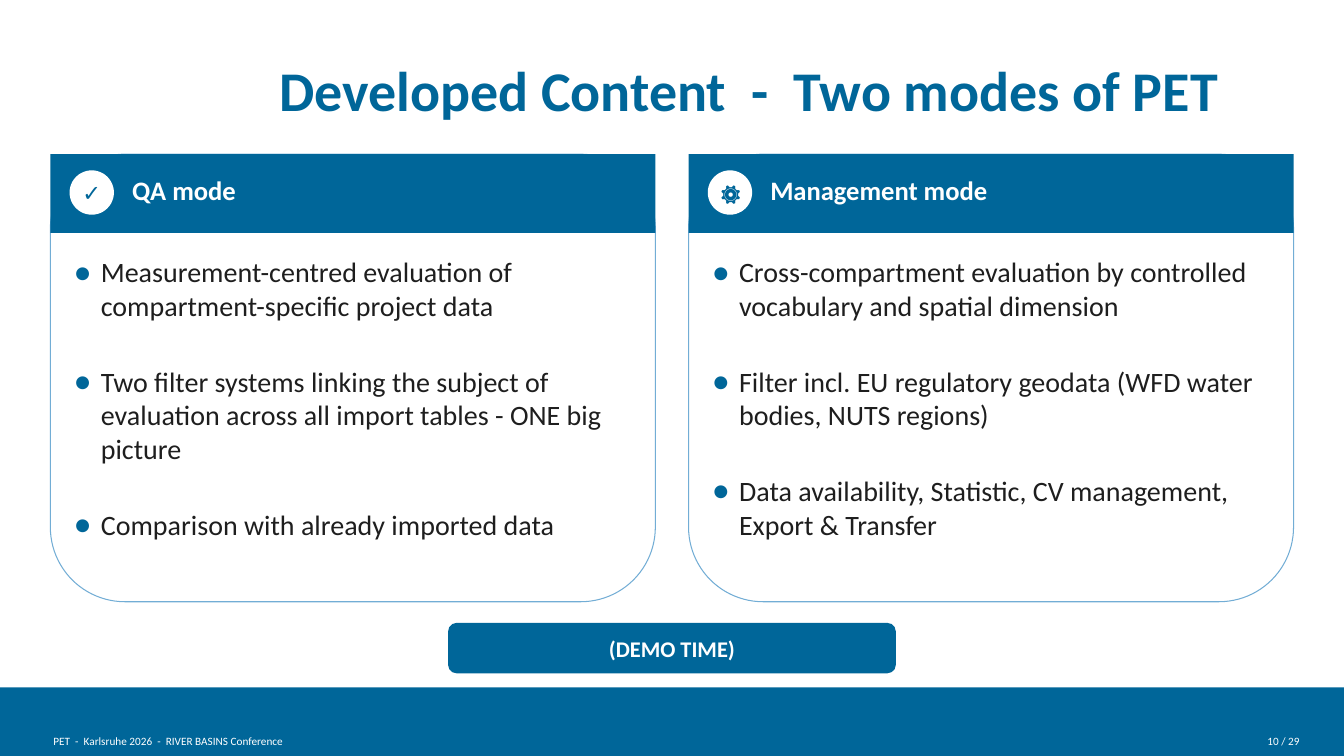
from dataclasses import dataclass

from lxml import etree
from pptx import Presentation
from pptx import util as u
from pptx.dml.color import RGBColor
from pptx.enum import shapes, text
from pptx.oxml import ns

Kind = shapes.MSO_SHAPE
Align = text.PP_ALIGN
Anchor = text.MSO_ANCHOR


@dataclass(frozen=True)
class Theme:
    font: str = "Calibri"
    blue: str = "006699"
    edge: str = "72ADD5"
    ink: str = "1E1E1E"
    white: str = "FFFFFF"
    title: int = 40
    body: int = 20
    head: int = 19
    label: int = 16
    foot: int = 8
    gap: int = 30


THEME = Theme()
WIDE, HIGH = 13.33, 7.5
MARGIN = 0.5
CARD_W, CARD_H = 6, 4.44
MODES = [
    ("✓", "QA mode", [
        "Measurement-centred evaluation of compartment-specific project data",
        "Two filter systems linking the subject of evaluation across all "
        "import tables - ONE big picture",
        "Comparison with already imported data",
    ]),
    ("⚙", "Management mode", [
        "Cross-compartment evaluation by controlled vocabulary and spatial dimension",
        "Filter incl. EU regulatory geodata (WFD water bodies, NUTS regions)",
        "Data availability, Statistic, CV management, Export & Transfer",
    ]),
]


def paint(kind, slide, box, fill, line=None):
    """Add a flat preset shape, outlined only when a line colour is given."""
    shape = slide.shapes.add_shape(kind, *map(u.Inches, box))
    shape.shadow.inherit = False
    shape.fill.solid()
    shape.fill.fore_color.rgb = RGBColor.from_string(fill)
    if line:
        shape.line.color.rgb = RGBColor.from_string(line)
        shape.line.width = u.Pt(0.75)
    else:
        shape.line.fill.background()
    return shape


def write(shape, lines, size, color, bold=False, align=Align.LEFT,
          anchor=Anchor.MIDDLE, side=0.03, bullets=False):
    frame = shape.text_frame
    frame.word_wrap = True
    frame.vertical_anchor = anchor
    frame.margin_left = frame.margin_right = u.Inches(side)
    frame.margin_top = frame.margin_bottom = u.Inches(0.03)
    for i, line in enumerate(lines):
        para = frame.add_paragraph() if i else frame.paragraphs[0]
        para.alignment = align
        if i:
            para.space_before = u.Pt(THEME.gap)
        if bullets:
            dot(para)
        run = para.add_run()
        run.text = line
        run.font.name = THEME.font
        run.font.size = u.Pt(size)
        run.font.bold = bold
        run.font.color.rgb = RGBColor.from_string(color)


def dot(para):
    """Give a paragraph a hanging blue bullet."""
    props = para._p.get_or_add_pPr()
    props.set("marL", str(u.Inches(0.27)))
    props.set("indent", str(-u.Inches(0.27)))
    tint = etree.SubElement(props, ns.qn("a:buClr"))
    etree.SubElement(tint, ns.qn("a:srgbClr"), val=THEME.blue)
    etree.SubElement(props, ns.qn("a:buSzPct"), val="130000")
    etree.SubElement(props, ns.qn("a:buFont"), typeface=THEME.font)
    etree.SubElement(props, ns.qn("a:buChar"), char="•")


def label(slide, box, lines, size, color, **style):
    frame = slide.shapes.add_textbox(*map(u.Inches, box))
    write(frame, lines, size, color, **style)


def card(slide, box, icon, name, points):
    x, y, w, h = box
    paint(Kind.ROUNDED_RECTANGLE, slide, box, THEME.white, THEME.edge)
    paint(Kind.RECTANGLE, slide, (x, y, w, 0.78), THEME.blue)
    badge = paint(Kind.OVAL, slide, (x + 0.19, y + 0.16, 0.44, 0.44), THEME.white)
    write(badge, [icon], THEME.label, THEME.blue, bold=True,
          align=Align.CENTER, side=0.06)
    label(slide, (x + 0.78, y + 0.16, w - 0.89, 0.38), [name],
          THEME.head, THEME.white, bold=True)
    label(slide, (x + 0.2, y + 0.97, w - 0.42, h - 1.4), points,
          THEME.body, THEME.ink, anchor=Anchor.TOP, bullets=True)


def footer(slide, box):
    x, y, w, h = box
    paint(Kind.RECTANGLE, slide, box, THEME.blue)
    row = y + 0.43
    label(slide, (x + MARGIN, row, 6.94, 0.19),
          ["PET  -  Karlsruhe 2026  -  RIVER BASINS Conference"],
          THEME.foot, THEME.white, anchor=Anchor.TOP)
    label(slide, (x + w - 1.52, row, 1.11, 0.19), ["10 / 29"],
          THEME.foot, THEME.white, align=Align.RIGHT, anchor=Anchor.TOP)


def demo(slide, box):
    pill = paint(Kind.ROUNDED_RECTANGLE, slide, box, THEME.blue)
    write(pill, ["(DEMO TIME)"], THEME.label, THEME.white, bold=True,
          align=Align.CENTER, side=0.06)


def main():
    deck = Presentation()
    deck.slide_width, deck.slide_height = u.Inches(WIDE), u.Inches(HIGH)
    slide = deck.slides.add_slide(deck.slide_layouts[6])
    footer(slide, (0, 6.82, WIDE, HIGH - 6.82))
    label(slide, (2.74, 0.52, 10.15, 0.73),
          ["Developed Content  -  Two modes of PET"],
          THEME.title, THEME.blue, bold=True)
    step = WIDE - 2 * MARGIN - CARD_W
    for i, mode in enumerate(MODES):
        card(slide, (MARGIN + i * step, 1.53, CARD_W, CARD_H), *mode)
    demo(slide, ((WIDE - 4.44) / 2, 6.18, 4.44, 0.5))
    deck.save("out.pptx")


if __name__ == "__main__":
    main()
